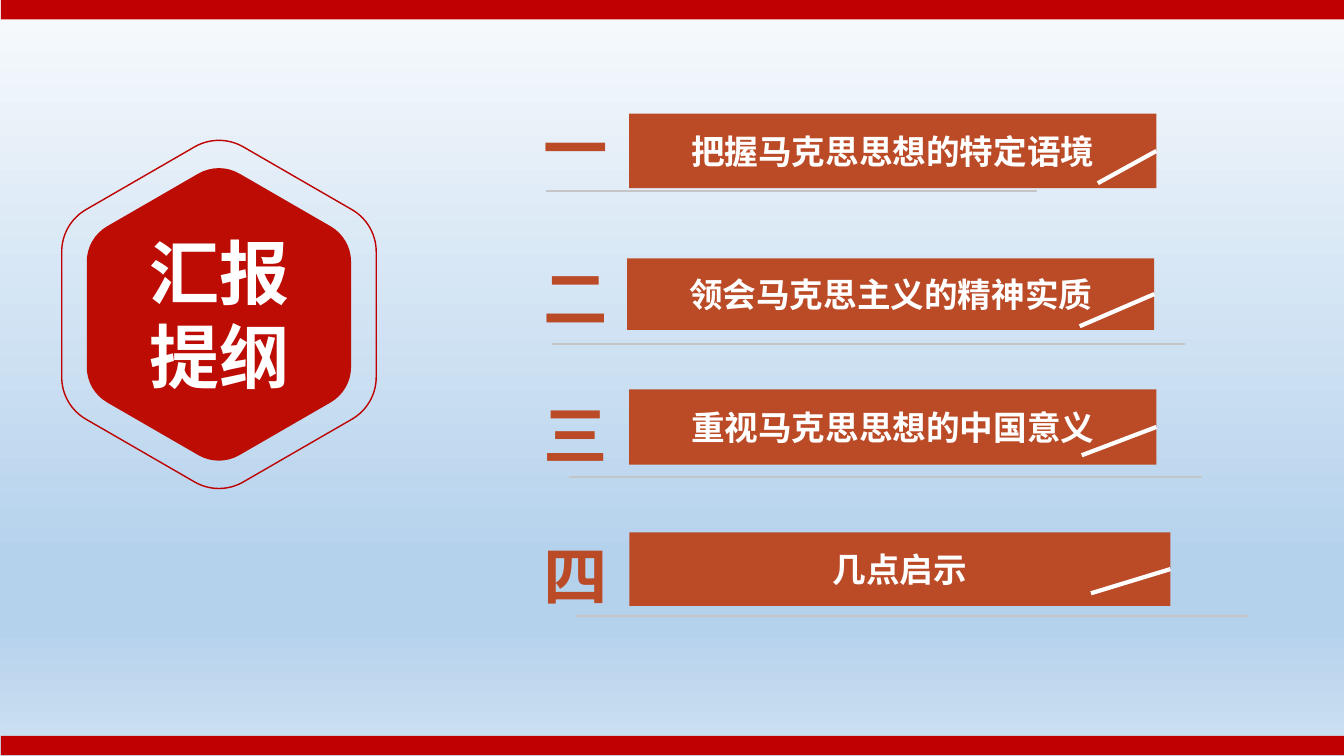
from math import cos, radians, sin

from lxml import etree
from pptx import Presentation
from pptx.dml.color import RGBColor
from pptx.enum.shapes import MSO_CONNECTOR, MSO_SHAPE
from pptx.enum.text import MSO_ANCHOR, MSO_AUTO_SIZE, PP_ALIGN
from pptx.oxml.ns import qn
from pptx.util import Pt

RECT = MSO_SHAPE.RECTANGLE
STRAIGHT = MSO_CONNECTOR.STRAIGHT
TOP, MIDDLE = MSO_ANCHOR.TOP, MSO_ANCHOR.MIDDLE
LEFT, CENTER, JUSTIFY = PP_ALIGN.LEFT, PP_ALIGN.CENTER, PP_ALIGN.JUSTIFY
GROW = MSO_AUTO_SIZE.SHAPE_TO_FIT_TEXT

WIDTH, HEIGHT = 960, 540
CJK = "Noto Sans CJK SC"
BAND, RUST, WHITE, GREY = "C00000", "BB4A27", "FFFFFF", "C5C5C5"
SKY = [(0, "F7FAFD"), (74, "B5D2EC"), (83, "B5D2EC"), (100, "CEE1F2")]

ITEMS = [
    dict(number="一", title="把握马克思思想的特定语境", box=(449.5, 81.2, 376.5, 53.3),
         num_dy=-7.8, num_w=46, slash=(41.8, 23), rule=(-59.3, 1.8, 350.6)),
    dict(number="二", title="领会马克思主义的精神实质", box=(448, 184.5, 376.5, 51.1),
         num_dy=-3.8, num_w=61.2, slash=(53.3, 23), rule=(-53.9, 9.9, 452.2)),
    dict(number="三", title="重视马克思思想的中国意义", box=(449.5, 278.1, 376.5, 53.8),
         num_dy=0.2, num_w=61.2, slash=(53.3, 20.2), rule=(-43.4, 8.7, 452.2)),
    dict(number="四", title="几点启示", box=(449.5, 380.2, 386.5, 52.6),
         num_dy=-1.1, num_w=68.4, slash=(56.7, 17.3), rule=(-38.4, 7.1, 480.2)),
]


def rgb(value):
    return RGBColor.from_string(value)


def write(sp, text, size, font, color=WHITE, align=LEFT, anchor=TOP, wrap=True, grow=False):
    tf = sp.text_frame
    tf.word_wrap = wrap
    tf.vertical_anchor = anchor
    if grow:
        tf.auto_size = GROW
    for i, line in enumerate(text.split("\n")):
        p = tf.add_paragraph() if i else tf.paragraphs[0]
        p.alignment = align
        r = p.add_run()
        r.text = line
        r.font.size = Pt(size)
        r.font.bold = True
        r.font.name = font
        r.font.color.rgb = rgb(color)
        etree.SubElement(r.font._element, qn("a:ea")).set("typeface", CJK)


def add_bar(shapes, box, color):
    sp = shapes.add_shape(RECT, *map(Pt, box))
    sp.shadow.inherit = False
    sp.fill.solid()
    sp.fill.fore_color.rgb = rgb(color)
    sp.line.fill.background()
    return sp


def add_line(shapes, x1, y1, x2, y2, color, width):
    line = shapes.add_connector(STRAIGHT, Pt(x1), Pt(y1), Pt(x2), Pt(y2))
    line.line.color.rgb = rgb(color)
    line.line.width = Pt(width)
    etree.SubElement(line._element.spPr, qn("a:effectLst"))


def toward(a, b, share):
    return tuple(m + share * (n - m) for m, n in zip(a, b))


def hexagon_points(cx, cy, radius, cut=0.155, pull=0.62):
    corners = [(cx + radius * cos(radians(a)), cy + radius * sin(radians(a)))
               for a in range(-30, 330, 60)]
    points = []
    for i, corner in enumerate(corners):
        before, after = corners[i - 1], corners[(i + 1) % 6]
        start, end = toward(corner, before, cut), toward(corner, after, cut)
        points += [toward(before, corner, 0.5), start,
                   toward(start, corner, pull), toward(end, corner, pull), end]
    return [tuple(map(Pt, point)) for point in points]


def add_hexagon(shapes, cx, cy, radius):
    points = hexagon_points(cx, cy, radius)
    builder = shapes.build_freeform(*points[-1])
    builder.add_line_segments(points, close=True)
    sp = builder.convert_to_shape()
    sp.shadow.inherit = False
    segments = list(sp._element.iter(qn("a:lnTo")))
    for i in range(0, len(segments), 5):
        first, second, end = segments[i + 2:i + 5]
        curve = etree.Element(qn("a:cubicBezTo"))
        first.addprevious(curve)
        for segment in (first, second, end):
            curve.append(segment[0])
            segment.getparent().remove(segment)
    return sp


def add_background(s):
    fill = s.background.fill
    fill.gradient()
    fill.gradient_angle = 270
    stops = s._element.find(".//" + qn("a:gsLst"))
    for stop in list(stops):
        stops.remove(stop)
    for pos, color in SKY:
        gs = etree.SubElement(stops, qn("a:gs"), pos=str(pos * 1000))
        etree.SubElement(gs, qn("a:srgbClr"), val=color)


def add_badge(shapes, x, y, w, h):
    cx, cy = x + w / 2, y + h / 2
    ring = add_hexagon(shapes, cx, cy, 129.7)
    ring.fill.background()
    ring.line.color.rgb = rgb("BE0000")
    ring.line.width = Pt(1)
    core = add_hexagon(shapes, cx, cy, 109)
    core.fill.solid()
    core.fill.fore_color.rgb = rgb("BC0C04")
    core.line.fill.background()
    title = shapes.add_textbox(Pt(cx - 57), Pt(cy - 64.1), Pt(114.5), Pt(128.2))
    write(title, "汇报\n提纲", 50, CJK, wrap=False, grow=True)


def add_item(shapes, number, title, box, num_dy, num_w, slash, rule):
    x, y, w, h = box
    group = shapes.add_group_shape().shapes
    sp = group.add_textbox(Pt(381), Pt(y + num_dy), Pt(num_w), Pt(62.6))
    write(sp, number, 46, "Arial", RUST, JUSTIFY, MIDDLE, grow=True)
    write(add_bar(group, box, RUST), title, 24, "Calibri", align=CENTER, anchor=MIDDLE)
    run, drop = slash
    add_line(group, x + w, y + h / 2, x + w - run, y + h / 2 + drop, WHITE, 3)
    dx, gap, length = rule
    add_line(group, x + dx, y + h + gap, x + dx + length, y + h + gap, GREY, 1.5)


def main():
    prs = Presentation()
    prs.slide_width, prs.slide_height = Pt(WIDTH), Pt(HEIGHT)
    s = prs.slides.add_slide(prs.slide_layouts[6])
    add_background(s)
    for top in (0, 525.6):
        add_bar(s.shapes, (0.7, top, 959.3, 13.9), BAND)
    add_badge(s.shapes, 44.1, 98.6, 224.6, 252)
    for item in ITEMS:
        add_item(s.shapes, **item)
    prs.save("out.pptx")


if __name__ == "__main__":
    main()
